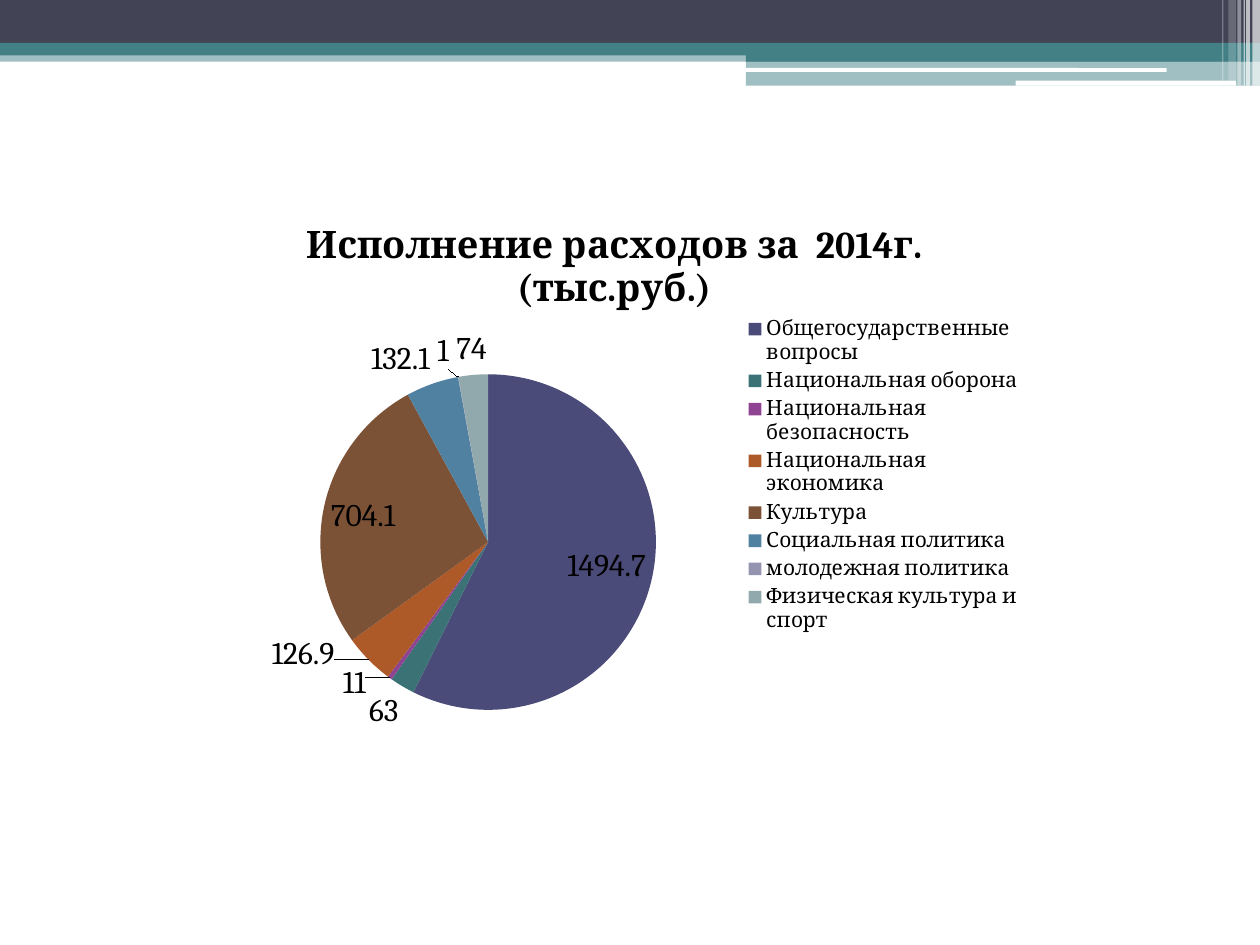
from lxml import etree
from pptx import Presentation
from pptx.chart.data import CategoryChartData
from pptx.dml.color import RGBColor
from pptx.enum.chart import XL_CHART_TYPE, XL_LABEL_POSITION, XL_LEGEND_POSITION
from pptx.enum.shapes import MSO_SHAPE
from pptx.oxml import parse_xml
from pptx.oxml.ns import nsdecls, qn
from pptx.util import Inches, Pt

RECT, ROUNDED = MSO_SHAPE.RECTANGLE, MSO_SHAPE.ROUNDED_RECTANGLE
PIE = XL_CHART_TYPE.PIE
RIGHT = XL_LEGEND_POSITION.RIGHT
BEST_FIT = XL_LABEL_POSITION.BEST_FIT
FONT = "Cambria"
COLORS = {"slate": "424456", "teal": "438086", "white": "FFFFFF", "text": "000000"}

prs = Presentation()
prs.slide_width, prs.slide_height = Inches(10), Inches(7.5)
slide = prs.slides.add_slide(prs.slide_layouts[6])


def add_band(left, top, width, height, color, opacity=100, shape=RECT):
    band = slide.shapes.add_shape(
        shape, Inches(left), Inches(top), Inches(width), Inches(height))
    band.shadow.inherit = False
    band.fill.solid()
    band.fill.fore_color.rgb = RGBColor.from_string(COLORS[color])
    band.line.fill.background()
    if opacity < 100:
        rgb = band.fill._xPr.find(".//" + qn("a:srgbClr"))
        etree.SubElement(rgb, qn("a:alpha")).set("val", str(opacity * 1000))


def set_layout(parent, x, y, width, height, inner=False):
    """Place a chart part by fractions of the chart area."""
    for old in parent.findall(qn("c:layout")):
        parent.remove(old)
    target = '<c:layoutTarget val="inner"/>' if inner else ""
    layout = parse_xml(
        f'<c:layout {nsdecls("c")}><c:manualLayout>{target}'
        '<c:xMode val="edge"/><c:yMode val="edge"/>'
        f'<c:x val="{x}"/><c:y val="{y}"/><c:w val="{width}"/><c:h val="{height}"/>'
        '</c:manualLayout></c:layout>')
    parent.insert(0 if inner else 1, layout)


# Header bands
add_band(0, 0.4, 10, 0.09, "teal", 50)
add_band(0, 0, 10, 0.34, "slate")
add_band(0, 0.34, 10, 0.1, "teal")
add_band(5.92, 0.39, 4.08, 0.1, "teal")
add_band(5.92, 0.48, 4.08, 0.2, "teal", 50)
add_band(5.91, 0.54, 3.35, 0.03, "white", shape=ROUNDED)
add_band(8.06, 0.64, 1.75, 0.04, "white", shape=ROUNDED)

# Vertical stripes at the right edge
for left, width, height, opacity in [
    (9.94, 0.06, 0.68, 65), (9.89, 0.03, 0.68, 65), (9.87, 0.01, 0.68, 60),
    (9.82, 0.03, 0.68, 40), (9.75, 0.06, 0.64, 20), (9.7, 0.01, 0.64, 30),
]:
    add_band(left, 0, width, height, "white", opacity)

# Expenses: name, value, slice colour
expenses = [
    ("Общегосударственные вопросы", 1494.7, "4A4B78"),
    ("Национальная оборона", 63, "3B7276"),
    ("Национальная безопасность", 11, "8E4492"),
    ("Национальная экономика ", 126.9, "AD5928"),
    ("Культура", 704.1, "7B5236"),
    ("Социальная политика", 132.1, "5181A1"),
    ("молодежная политика", 1, "9494B0"),
    ("Физическая культура и спорт", 74, "91A9AC"),
]
data = CategoryChartData()
data.categories = [name for name, _, _ in expenses]
data.add_series("Series 1", [value for _, value, _ in expenses])
chart = slide.shapes.add_chart(
    PIE, Inches(1.54), Inches(1.55), Inches(6.67), Inches(4.44), data).chart
chart.font.name = FONT
chart.font.size = Pt(18)
chart.font.color.rgb = RGBColor.from_string(COLORS["text"])

# Chart title
chart.has_title = True
heading = chart.chart_title.text_frame.paragraphs[0].add_run()
heading.text = "Исполнение расходов за  2014г. (тыс.руб.)"
heading.font.name = FONT
heading.font.size = Pt(21.6)
heading.font.bold = True
heading.font.color.rgb = RGBColor.from_string(COLORS["text"])

# Slices and value labels
pie = chart.plots[0]
pie.vary_by_categories = True
for index, (_, _, color) in enumerate(expenses):
    slice_fill = pie.series[0].points[index].format.fill
    slice_fill.solid()
    slice_fill.fore_color.rgb = RGBColor.from_string(color)
pie.has_data_labels = True
labels = pie.data_labels
labels.show_value = True
labels.show_percentage = False
labels.position = BEST_FIT
labels.font.name = FONT
labels.font.size = Pt(18)
leader_lines = labels._element.find(qn("c:showLeaderLines"))
if leader_lines is None:
    leader_lines = etree.SubElement(labels._element, qn("c:showLeaderLines"))
leader_lines.set("val", "1")
set_layout(chart._chartSpace.chart.plotArea, 0.15, 0.32, 0.4, 0.6, inner=True)

# Legend
chart.has_legend = True
legend = chart.legend
legend.position = RIGHT
legend.include_in_layout = False
legend.font.name = FONT
legend.font.size = Pt(12)
set_layout(legend._element, 0.65, 0.21, 0.34, 0.58)

prs.save("out.pptx")
